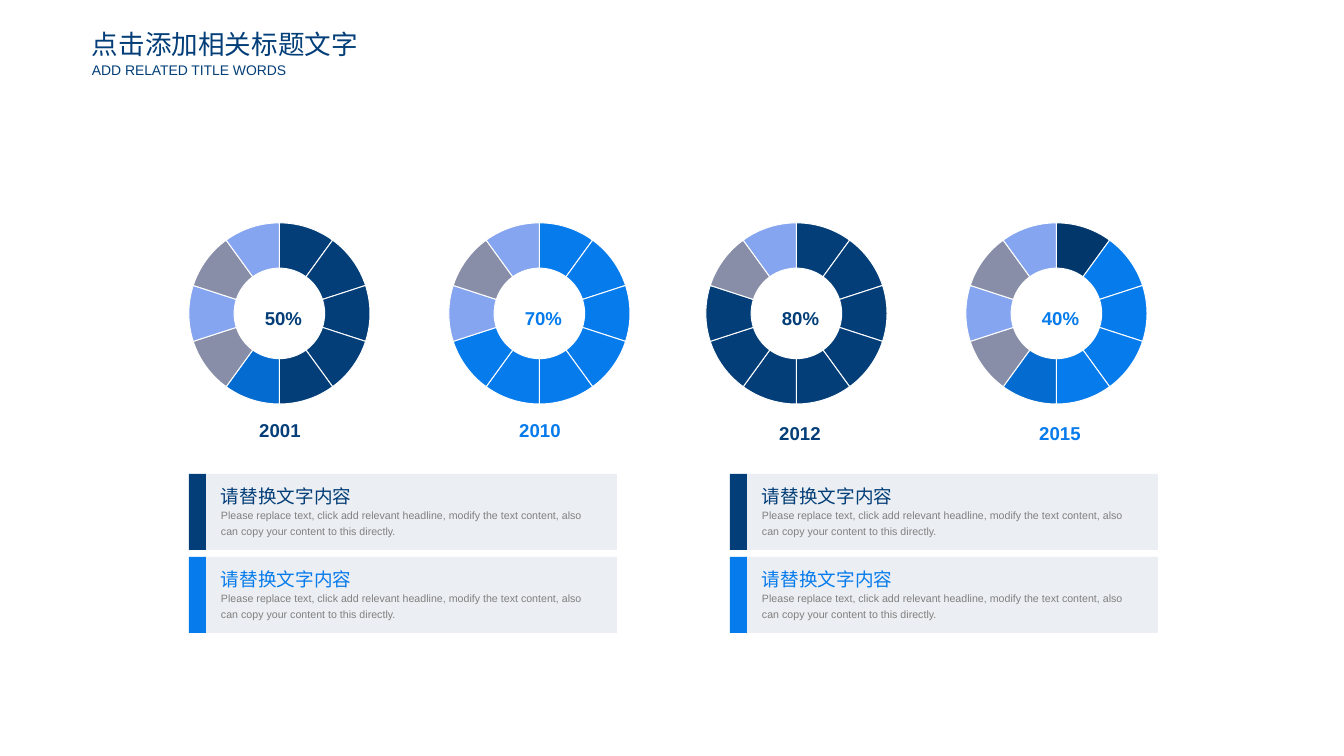
from pptx import Presentation
from pptx.chart.data import CategoryChartData
from pptx.dml.color import RGBColor
from pptx.enum.chart import XL_CHART_TYPE
from pptx.enum.shapes import MSO_SHAPE
from pptx.enum.text import MSO_ANCHOR, MSO_AUTO_SIZE, PP_ALIGN
from pptx.oxml import parse_xml
from pptx.oxml.ns import nsdecls, qn
from pptx.util import Pt

EMU_PER_PX = 9565
FONT = "Arial"
COLORS = {
    "navy": "033E78",
    "deep": "02376B",
    "blue": "067BEC",
    "mid": "046BD0",
    "pale": "86A5F0",
    "slate": "888EA8",
    "panel": "EBEEF2",
    "body": "808080",
    "white": "FFFFFF",
    "black": "000000",
}
TAIL = ["mid", "slate", "pale", "slate", "pale"]
DONUTS = [
    (176, 414, "50%", "2001", "navy", ["navy"] * 5 + TAIL),
    (436, 414, "70%", "2010", "blue", ["blue"] * 7 + TAIL[2:]),
    (693, 417, "80%", "2012", "navy", ["navy"] * 8 + TAIL[3:]),
    (953, 417, "40%", "2015", "blue", ["deep"] + ["blue"] * 4 + TAIL),
]
CARD_TITLE = "请替换文字内容"
CARD_BODY = (
    "Please replace text, click add relevant headline, modify the text content, "
    "also can copy your content to this directly."
)


def px(length):
    return length * EMU_PER_PX


def rgb(name):
    return RGBColor.from_string(COLORS[name])


def add_text(slide, box, lines, align=PP_ALIGN.LEFT, spacing=None, wrap=True, padded=False):
    shape = slide.shapes.add_textbox(*map(px, box))
    frame = shape.text_frame
    frame.word_wrap = wrap
    frame.auto_size = MSO_AUTO_SIZE.SHAPE_TO_FIT_TEXT
    if padded:
        frame.vertical_anchor = MSO_ANCHOR.MIDDLE
    else:
        frame.margin_left = frame.margin_right = 0
        frame.margin_top = frame.margin_bottom = 0
    for index, (text, size, color, bold) in enumerate(lines):
        paragraph = frame.add_paragraph() if index else frame.paragraphs[0]
        paragraph.alignment = align
        paragraph.line_spacing = spacing
        run = paragraph.add_run()
        run.text = text
        run.font.name = FONT
        run.font.size = Pt(size)
        run.font.bold = bold
        run.font.color.rgb = rgb(color)


def add_ring(slide, box, slice_colors):
    data = CategoryChartData()
    data.categories = [str(number) for number in range(1, 11)]
    data.add_series("Series 1", [10] * 10)
    chart = slide.shapes.add_chart(XL_CHART_TYPE.DOUGHNUT, *map(px, box), data).chart
    chart.has_legend = False
    chart.has_title = False
    chart.font.name = FONT
    chart.font.size = Pt(18)
    chart.font.color.rgb = rgb("black")
    plot = chart.plots[0]
    plot.vary_by_categories = True
    for index, color in enumerate(slice_colors):
        point_format = plot.series[0].points[index].format
        point_format.fill.solid()
        point_format.fill.fore_color.rgb = rgb(color)
        point_format.line.color.rgb = rgb("white")
        point_format.line.width = Pt(0.75)

    plot_area = chart.element.find(".//" + qn("c:plotArea"))
    plot_area.find(".//" + qn("c:holeSize")).set("val", "80")
    layout = plot_area.find(qn("c:layout"))
    if layout is not None:
        plot_area.remove(layout)
    plot_area.insert(0, parse_xml(
        f'<c:layout {nsdecls("c")}><c:manualLayout><c:layoutTarget val="inner"/>'
        '<c:xMode val="edge"/><c:yMode val="edge"/><c:x val="0.06"/><c:y val="0.09"/>'
        '<c:w val="0.87"/><c:h val="0.82"/></c:manualLayout></c:layout>'
    ))


def add_donut(slide, box, year_box, percent, year, color, slice_colors):
    left, top, width, height = box
    add_ring(slide, box, slice_colors)
    add_text(slide, (left + 67, top + 95, 81, 36), [(percent, 14, color, True)],
             PP_ALIGN.CENTER, 1.2, padded=True)
    add_text(slide, year_box, [(year, 14, color, True)], PP_ALIGN.CENTER, 1.2, wrap=False)


def add_card(slide, box, color):
    left, top, width, height = box
    bar_width = 17
    group = slide.shapes.add_group_shape()
    parts = [
        (left + bar_width, width - bar_width, "panel"),
        (left, bar_width, color),
    ]
    for part_left, part_width, fill in parts:
        shape = group.shapes.add_shape(
            MSO_SHAPE.RECTANGLE, px(part_left), px(top), px(part_width), px(height))
        shape.shadow.inherit = False
        shape.fill.solid()
        shape.fill.fore_color.rgb = rgb(fill)
        shape.line.fill.background()
    add_text(slide, (left + 32, top + 6, 373, 58),
             [(CARD_TITLE, 14, color, False), (CARD_BODY, 8, "body", False)], spacing=1.2)


def add_header(slide, box):
    left, top, width, height = box
    add_text(slide, (left, top, width, 32),
             [("点击添加相关标题文字", 20, "navy", False)], wrap=False)
    add_text(slide, (left, top + 34, 199, 17),
             [("ADD RELATED TITLE WORDS", 10.5, "navy", False)], wrap=False)


def main():
    presentation = Presentation()
    presentation.slide_width = px(1344)
    presentation.slide_height = px(756)
    slide = presentation.slides.add_slide(presentation.slide_layouts[6])
    for index, (left, year_top, *content) in enumerate(DONUTS):
        year_box = (245 + 260 * index, year_top, 70, 27)
        add_donut(slide, (left, 203, 209, 221), year_box, *content)
    for column in range(2):
        for row, color in enumerate(["navy", "blue"]):
            add_card(slide, (189 + 541 * column, 474 + 83 * row, 428, 76), color)
    add_header(slide, (92, 28, 268, 51))
    presentation.save("out.pptx")


if __name__ == "__main__":
    main()
